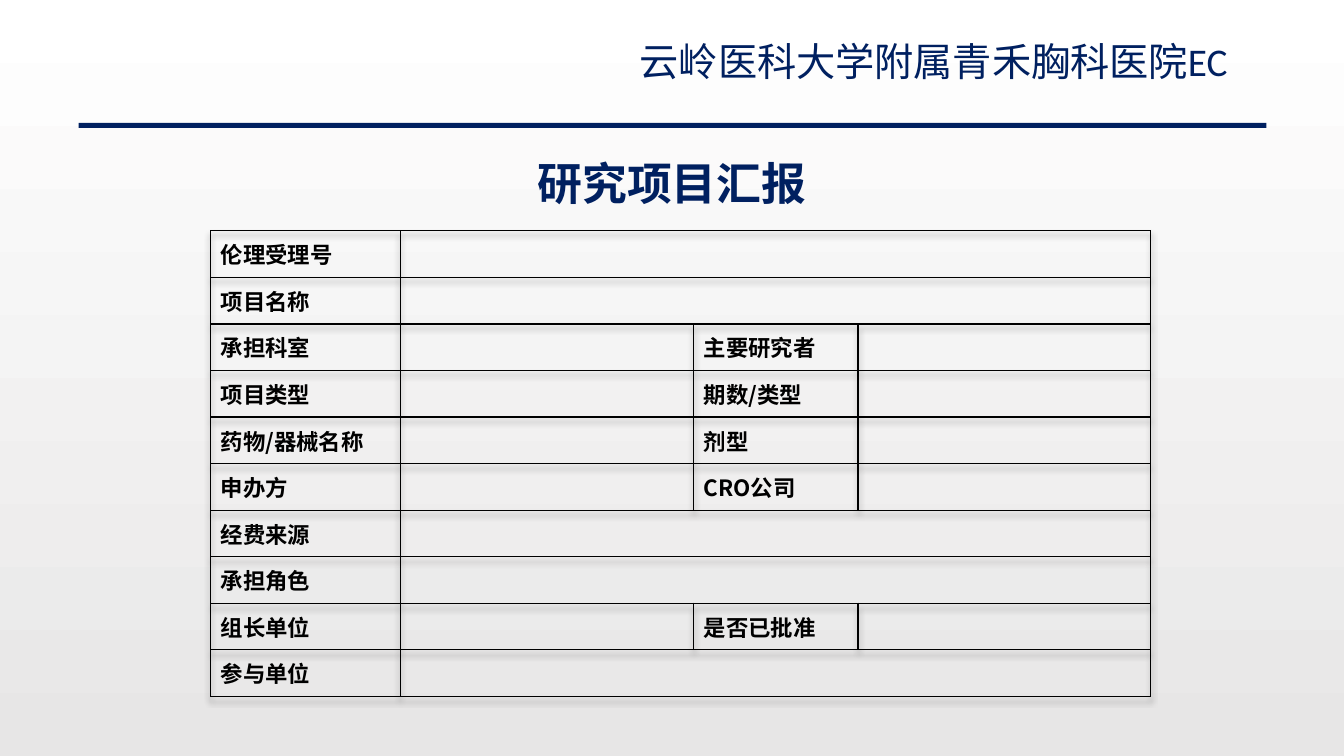
from dataclasses import dataclass

from pptx import Presentation, util as u
from pptx.dml.color import RGBColor
from pptx.enum import shapes, text
from pptx.oxml import parse_xml
from pptx.oxml.ns import nsdecls, qn


@dataclass(frozen=True)
class Theme:
    navy: str = "002060"
    black: str = "000000"
    top: str = "FFFFFF"
    base: str = "E7E6E6"
    latin: str = "Calibri"
    cjk: str = "Noto Sans CJK SC"
    title: int = 32
    head: int = 28
    body: int = 16


ROWS = [
    ("伦理受理号",),
    ("项目名称",),
    ("承担科室", "主要研究者"),
    ("项目类型", "期数/类型"),
    ("药物/器械名称", "剂型"),
    ("申办方", "CRO公司"),
    ("经费来源",),
    ("承担角色",),
    ("组长单位", "是否已批准"),
    ("参与单位",),
]


class Page:
    def __init__(self, deck, theme):
        self.theme = theme
        self.slide = deck.slides.add_slide(deck.slide_layouts[5])

    def color(self, value):
        return RGBColor.from_string(value)

    def backdrop(self):
        fill = self.slide.background.fill
        fill.gradient()
        fill.gradient_angle = 270
        for stop, tone in zip(fill.gradient_stops, (self.theme.top, self.theme.base)):
            stop.color.rgb = self.color(tone)

    def style(self, para, size, tone, face, bold=False):
        for run in para.runs:
            font = run.font
            font.size, font.bold, font.name = u.Pt(size), bold, face
            font.color.rgb = self.color(tone)
            east = parse_xml(f'<a:ea {nsdecls("a")} typeface="{self.theme.cjk}"/>')
            font._element.find(qn("a:latin")).addnext(east)

    def place(self, shape, box):
        shape.left, shape.top, shape.width, shape.height = map(u.Inches, box)

    def title(self, words, box):
        shape = self.slide.shapes.title
        self.place(shape, box)
        frame = shape.text_frame
        frame.text = words
        frame.auto_size = text.MSO_AUTO_SIZE.NONE
        frame.vertical_anchor = text.MSO_ANCHOR.BOTTOM
        para = frame.paragraphs[0]
        para.alignment = text.PP_ALIGN.CENTER
        para.line_spacing = 0.9
        self.style(para, self.theme.title, self.theme.navy, self.theme.cjk, True)

    def header(self, words, box):
        frame = self.slide.shapes.add_textbox(*map(u.Inches, box)).text_frame
        frame.word_wrap = True
        frame.text = words
        para = frame.paragraphs[0]
        para.alignment = text.PP_ALIGN.CENTER
        para.line_spacing = u.Pt(19)
        self.style(para, self.theme.head, self.theme.navy, self.theme.latin)

    def bar(self, box):
        shape = self.slide.shapes.add_shape(
            shapes.MSO_SHAPE.RECTANGLE, *map(u.Inches, box))
        shape.shadow.inherit = False
        shape.fill.solid()
        shape.fill.fore_color.rgb = self.color(self.theme.navy)
        shape.line.fill.background()

    def border(self, cell):
        props = cell._tc.get_or_add_tcPr()
        for spot, side in enumerate("LRTB"):
            props.insert(spot, parse_xml(
                f'<a:ln{side} {nsdecls("a")} w="{u.Pt(1)}"><a:solidFill>'
                f'<a:srgbClr val="{self.theme.black}"/></a:solidFill></a:ln{side}>'))

    def shade(self, table):
        table._tbl.tblPr.insert(0, parse_xml(
            f'<a:effectLst {nsdecls("a")}><a:outerShdw blurRad="50800" dist="38100" '
            f'dir="5400000" algn="t" rotWithShape="0"><a:srgbClr val="{self.theme.black}">'
            '<a:alpha val="40000"/></a:srgbClr></a:outerShdw></a:effectLst>'))

    def label(self, cell, words):
        cell.text = words
        self.style(cell.text_frame.paragraphs[0], self.theme.body,
                   self.theme.black, self.theme.cjk, True)

    def form(self, rows, widths, box):
        table = self.slide.shapes.add_table(
            len(rows), len(widths), *map(u.Inches, box)).table
        table.first_row = table.horz_banding = False
        self.shade(table)
        for column, width in zip(table.columns, widths):
            column.width = u.Inches(width)
        for cell in table.iter_cells():
            cell.fill.background()
            cell.vertical_anchor = text.MSO_ANCHOR.MIDDLE
            self.border(cell)
        for row, names in enumerate(rows):
            for spot, name in enumerate(names):
                self.label(table.cell(row, 2 * spot), name)
            if len(names) == 1:
                table.cell(row, 1).merge(table.cell(row, len(widths) - 1))


def main():
    deck = Presentation()
    deck.slide_width, deck.slide_height = u.Inches(13.33), u.Inches(7.5)
    page = Page(deck, Theme())
    page.backdrop()
    page.title("研究项目汇报", (4.87, 1.47, 3.59, 0.67))
    page.header("云岭医科大学附属青禾胸科医院EC", (5.76, 0.52, 7, 0.42))
    page.bar((0.78, 1.22, 11.78, 0.05))
    page.form(ROWS, (1.88, 2.91, 1.63, 2.9), (2.09, 2.29, 9.32, 4.62))
    deck.save("out.pptx")


if __name__ == "__main__":
    main()
